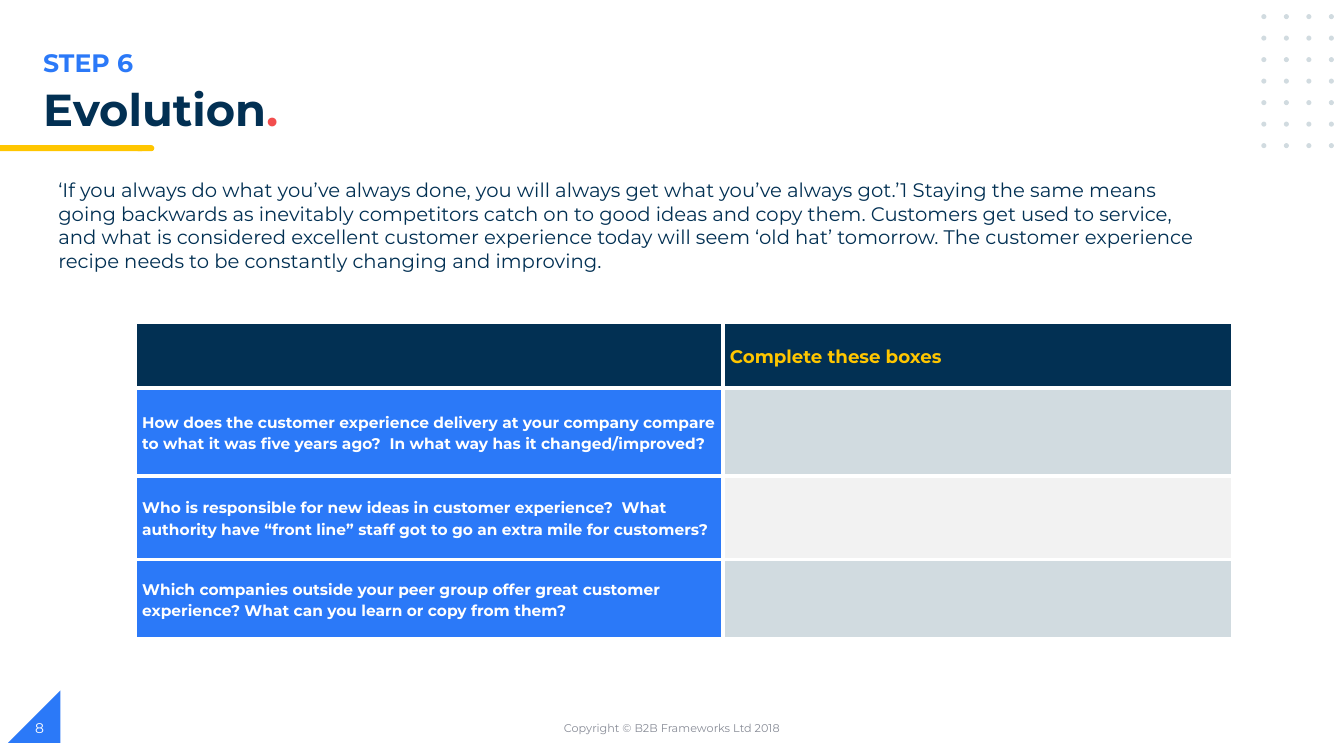
from dataclasses import dataclass

from lxml import etree
from pptx import Presentation
from pptx import util as u
from pptx.dml import color
from pptx.enum import shapes, text
from pptx.oxml import ns


@dataclass(frozen=True)
class Theme:
    font: str = "Montserrat"
    navy: str = "023053"
    blue: str = "2B79F8"
    yellow: str = "FFC600"
    red: str = "F24E4E"
    mist: str = "D1DBE0"
    pale: str = "F2F2F2"
    grey: str = "888C97"
    white: str = "FFFFFF"
    title_size: int = 32
    step_size: int = 18
    body_size: int = 14
    header_size: int = 13
    question_size: int = 11
    number_size: int = 10
    footer_size: int = 8
    border_width: int = 3


THEME = Theme()

INTRO = (
    "‘If you always do what you’ve always done, you will always get what you’ve always got.’1 "
    "Staying the same means going backwards as inevitably competitors catch on to good ideas and "
    "copy them. Customers get used to service, and what is considered excellent customer experience "
    "today will seem ‘old hat’ tomorrow. The customer experience recipe needs to be constantly "
    "changing and improving."
)
QUESTIONS = [
    "How does the customer experience delivery at your company compare to what it was five years "
    "ago?  In what way has it changed/improved?",
    "Who is responsible for new ideas in customer experience?  What authority have “front line” "
    "staff got to go an extra mile for customers?",
    "Which companies outside your peer group offer great customer experience? What can you learn "
    "or copy from them?",
]
COLUMN_WIDTHS = [5.83, 5.06]
ROW_HEIGHTS = [0.65, 0.87, 0.83, 0.79]


def rgb(value):
    return color.RGBColor.from_string(value)


def add_span(para, words, *, size, fill, bold=False):
    span = para.add_run()
    span.text = words
    span.font.name = THEME.font
    span.font.size = u.Pt(size)
    span.font.bold = bold
    span.font.color.rgb = rgb(fill)


def add_text(page, words, left, top, width, height, *, size, fill, bold=False,
             align=text.PP_ALIGN.LEFT, anchor=text.MSO_ANCHOR.TOP, spacing=None):
    box = page.shapes.add_textbox(*map(u.Inches, (left, top, width, height)))
    frame = box.text_frame
    frame.word_wrap = True
    frame.vertical_anchor = anchor
    para = frame.paragraphs[0]
    para.alignment = align
    para.line_spacing = spacing
    add_span(para, words, size=size, fill=fill, bold=bold)
    return para


def add_block(page, kind, left, top, width, height, fill):
    block = page.shapes.add_shape(kind, *map(u.Inches, (left, top, width, height)))
    block.shadow.inherit = False
    block.fill.solid()
    block.fill.fore_color.rgb = rgb(fill)
    block.line.fill.background()
    return block


def add_heading(page, left, top, width):
    add_text(page, "STEP 6", left, top, width, 0.4,
             size=THEME.step_size, fill=THEME.blue, bold=True)
    title = add_text(page, "Evolution", left, top + 0.4, width, 0.56,
                     size=THEME.title_size, fill=THEME.navy, bold=True, spacing=0.9)
    add_span(title, ".", size=THEME.title_size, fill=THEME.red, bold=True)


def add_underline(page, left, top, width, height):
    cap = 0.19
    add_block(page, shapes.MSO_SHAPE.FLOWCHART_TERMINATOR,
              left + width - cap, top, cap, height, THEME.yellow)
    add_block(page, shapes.MSO_SHAPE.RECTANGLE,
              left, top, width - 0.12, height, THEME.yellow)


def add_dot_grid(page, left, top, width, height, columns=4, rows=7, dot=0.05):
    for row in range(rows):
        for column in range(columns):
            add_block(page, shapes.MSO_SHAPE.OVAL,
                      left + column * (width - dot) / (columns - 1),
                      top + row * (height - dot) / (rows - 1),
                      dot, dot, THEME.mist)


def add_footer(page, left, top, width, height):
    corner = add_block(page, shapes.MSO_SHAPE.RIGHT_TRIANGLE,
                       left + 0.08, top - 0.17, 0.52, 0.52, THEME.blue)
    corner._element.spPr.get_or_add_xfrm().set("flipH", "1")
    middle = text.MSO_ANCHOR.MIDDLE
    add_text(page, "8", left + 0.25, top, 3, height,
             size=THEME.number_size, fill=THEME.white, anchor=middle)
    add_text(page, "Copyright © B2B Frameworks Ltd 2018",
             left + (width - 4.5) / 2, top, 4.5, height, size=THEME.footer_size,
             fill=THEME.grey, align=text.PP_ALIGN.CENTER, anchor=middle)


def add_borders(cell):
    properties = cell._tc.get_or_add_tcPr()
    for side in ("a:lnL", "a:lnR", "a:lnT", "a:lnB"):
        line = etree.SubElement(properties, ns.qn(side), w=str(u.Pt(THEME.border_width)))
        solid = etree.SubElement(line, ns.qn("a:solidFill"))
        etree.SubElement(solid, ns.qn("a:srgbClr"), val=THEME.white)


def fill_cell(cell, words, *, back, size, fill):
    add_borders(cell)
    cell.fill.solid()
    cell.fill.fore_color.rgb = rgb(back)
    cell.vertical_anchor = text.MSO_ANCHOR.MIDDLE
    cell.margin_left = cell.margin_right = u.Inches(0.07)
    cell.margin_top = cell.margin_bottom = 0
    if words:
        para = cell.text_frame.paragraphs[0]
        para.line_spacing = 1.15
        add_span(para, words, size=size, fill=fill, bold=True)


def add_worksheet(page, left, top):
    table = page.shapes.add_table(
        len(ROW_HEIGHTS), len(COLUMN_WIDTHS), u.Inches(left), u.Inches(top),
        u.Inches(sum(COLUMN_WIDTHS)), u.Inches(sum(ROW_HEIGHTS))).table
    table.first_row = table.horz_banding = False
    for column, width in zip(table.columns, COLUMN_WIDTHS):
        column.width = u.Inches(width)
    for row, height in zip(table.rows, ROW_HEIGHTS):
        row.height = u.Inches(height)
    for index, words in enumerate(["", "Complete these boxes"]):
        fill_cell(table.cell(0, index), words, back=THEME.navy,
                  size=THEME.header_size, fill=THEME.yellow)
    for index, question in enumerate(QUESTIONS, start=1):
        answer_back = THEME.mist if index % 2 else THEME.pale
        for column, (words, back) in enumerate([(question, THEME.blue), ("", answer_back)]):
            fill_cell(table.cell(index, column), words, back=back,
                      size=THEME.question_size, fill=THEME.white)


def main():
    deck = Presentation()
    deck.slide_width, deck.slide_height = u.Inches(13.33), u.Inches(7.5)
    page = deck.slides.add_slide(deck.slide_layouts[6])
    add_underline(page, 0, 1.44, 1.53, 0.06)
    add_dot_grid(page, 12.51, 0.14, 0.72, 1.33)
    add_footer(page, 0, 7.02, 13.33, 0.4)
    add_heading(page, 0.33, 0.42, 6.69)
    add_worksheet(page, 1.34, 3.2)
    add_text(page, INTRO, 0.48, 1.72, 11.67, 1.04, size=THEME.body_size, fill=THEME.navy)
    deck.save("out.pptx")


if __name__ == "__main__":
    main()
